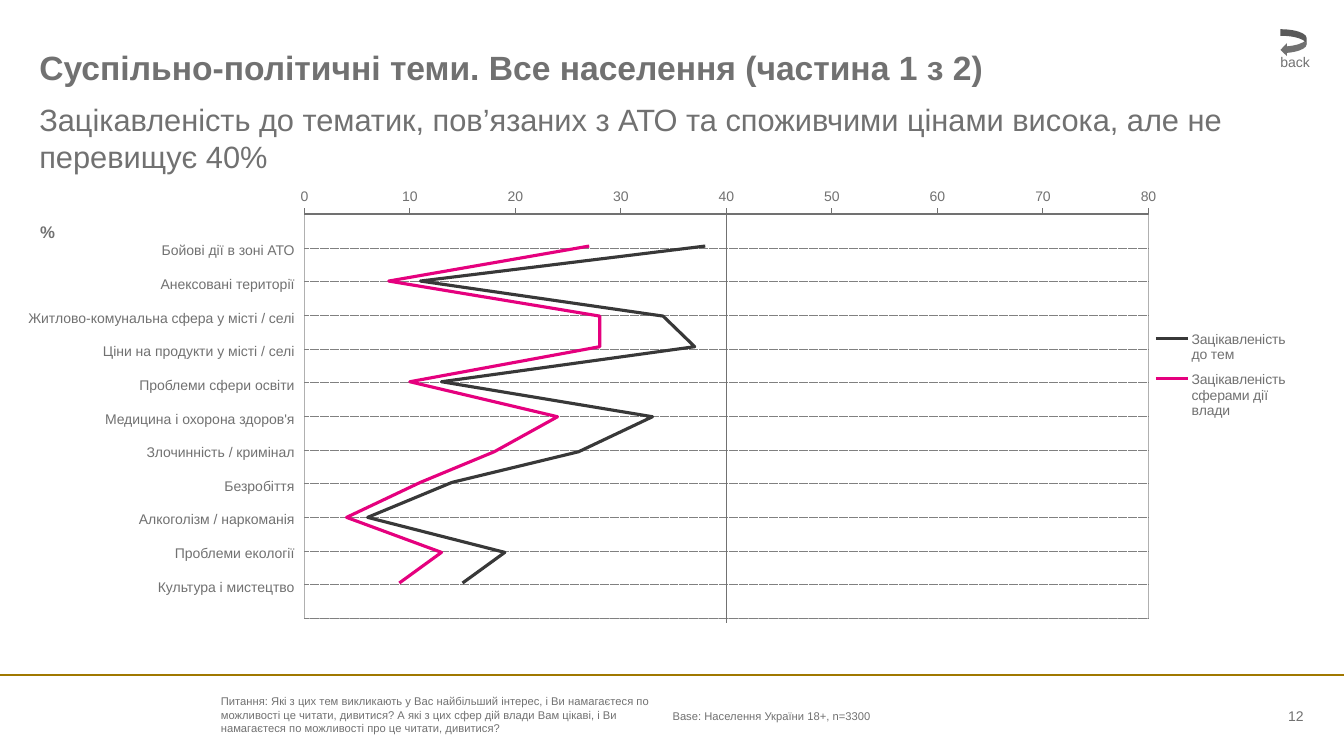
import pptx
import pptx.chart.data
import pptx.dml.color
import pptx.enum.chart
import pptx.enum.dml
import pptx.enum.shapes
import pptx.enum.text
import pptx.oxml
import pptx.oxml.ns
import pptx.util

Inches = pptx.util.Inches
Pt = pptx.util.Pt
RGBColor = pptx.dml.color.RGBColor
Anchor = pptx.enum.text.MSO_ANCHOR
Align = pptx.enum.text.PP_ALIGN
qn = pptx.oxml.ns.qn

GREY = RGBColor(0x71, 0x71, 0x71)
GRID_GREY = RGBColor(0x80, 0x80, 0x80)
FRAME_GREY = RGBColor(0xB0, 0xB0, 0xB0)
DARK = RGBColor(0x38, 0x38, 0x38)
PINK = RGBColor(0xE5, 0x00, 0x7E)
GOLD = RGBColor(0xA0, 0x78, 0x00)
WHITE = RGBColor(0xFF, 0xFF, 0xFF)
NO_TABLE_STYLE = "{2D5ABB26-0587-4C30-8999-92F81FD0307C}"

# Topic, interest in the topic, interest in the authorities' actions
TOPICS = [
    ("Бойові дії в зоні АТО", 38, 27),
    ("Анексовані території", 11, 8),
    ("Житлово-комунальна сфера у місті / селі", 34, 28),
    ("Ціни на продукти у місті / селі", 37, 28),
    ("Проблеми сфери освіти", 13, 10),
    ("Медицина і охорона здоров'я", 33, 24),
    ("Злочинність / кримінал", 26, 18),
    ("Безробіття", 14, 11),
    ("Алкоголізм / наркоманія", 6, 4),
    ("Проблеми екології", 19, 13),
    ("Культура і мистецтво", 15, 9),
]
SERIES = [("Зацікавленість до тем", DARK), ("Зацікавленість сферами дії влади", PINK)]
ROW_STEP = 100 / (len(TOPICS) + 2)


def write(frame, text, size=10, bold=False, align=Align.LEFT, anchor=Anchor.TOP,
          margins=(0, 0, 0, 0)):
    """Fill a text frame; margins run left, top, right, bottom in inches."""
    frame.word_wrap = True
    frame.vertical_anchor = anchor
    (frame.margin_left, frame.margin_top,
     frame.margin_right, frame.margin_bottom) = map(Inches, margins)
    paragraph = frame.paragraphs[0]
    paragraph.alignment = align
    paragraph.space_before = Pt(0)
    run = paragraph.add_run()
    run.text = text
    set_font(run.font, size, bold)


def set_font(font, size, bold=False):
    font.name = "Arial"
    font.size = Pt(size)
    font.bold = bold
    font.color.rgb = GREY


def add_label(slide, box, text, **text_format):
    label = slide.shapes.add_textbox(*map(Inches, box))
    write(label.text_frame, text, **text_format)


def add_rule(slide, start, end, color, width):
    rule = slide.shapes.add_connector(
        pptx.enum.shapes.MSO_CONNECTOR.STRAIGHT, *map(Inches, start + end))
    rule.line.color.rgb = color
    rule.line.width = Pt(width)
    rule._element.spPr.append(pptx.oxml.parse_xml(
        f"<a:effectLst {pptx.oxml.ns.nsdecls('a')}/>"))


def add_title(slide, text):
    title = slide.shapes.title
    title.left, title.top, title.width, title.height = map(Inches, (0.39, 0.45, 12.54, 0.44))
    write(title.text_frame, text, size=24, bold=True, anchor=Anchor.MIDDLE)


def manual_layout(x, y, width, height, inner=False):
    target = '<c:layoutTarget val="inner"/>' if inner else ""
    return pptx.oxml.parse_xml(
        f"<c:layout {pptx.oxml.ns.nsdecls('c')}><c:manualLayout>{target}"
        '<c:xMode val="edge"/><c:yMode val="edge"/>'
        f'<c:x val="{x}"/><c:y val="{y}"/><c:w val="{width}"/><c:h val="{height}"/>'
        "</c:manualLayout></c:layout>")


def profile_points():
    """Stack both profiles in one x column; each series fills its own part of y."""
    _, interest, authorities = zip(*TOPICS)
    percents = [*interest, None, None, *authorities, None]
    levels = [round(step * ROW_STEP) for step in range(1, len(TOPICS) + 3)]
    first, second = levels[1:], levels
    return percents, (first + [None] * len(second), [None] * len(first) + second)


def add_profile_chart(slide):
    """Draw each series as a vertical profile, one level per topic."""
    percents, level_columns = profile_points()
    profile_data = pptx.chart.data.XyChartData()
    for (name, _), levels in zip(SERIES, level_columns):
        profile = profile_data.add_series(name)
        for percent, level in zip(percents, levels):
            profile.add_data_point(percent, level)
    chart = slide.shapes.add_chart(
        pptx.enum.chart.XL_CHART_TYPE.XY_SCATTER_LINES_NO_MARKERS,
        *map(Inches, (2.54, 1.87, 10.4, 4.38)), profile_data).chart
    drop_empty_points(chart)
    chart.has_title = False
    set_font(chart.font, 10)
    for profile, (_, color) in zip(chart.plots[0].series, SERIES):
        profile.smooth = False
        profile.format.line.color.rgb = color
        profile.format.line.width = Pt(2.25)
        profile.marker.style = pptx.enum.chart.XL_MARKER_STYLE.NONE
    format_axes(chart)
    format_plot_area(chart)

    chart.has_legend = True
    chart.legend.position = pptx.enum.chart.XL_LEGEND_POSITION.RIGHT
    chart.legend.include_in_layout = False
    set_font(chart.legend.font, 10)
    legend = chart.legend._element
    for layout in legend.findall(qn("c:layout")):
        legend.remove(layout)
    legend.find(qn("c:legendPos")).addnext(manual_layout(0.85, 0.3, 0.14, 0.24))


def drop_empty_points(chart):
    for point in list(chart._chartSpace.iter(qn("c:pt"))):
        if point.find(qn("c:v")).text in (None, "", "None"):
            point.getparent().remove(point)


def format_axes(chart):
    percent = chart.category_axis
    percent.minimum_scale, percent.maximum_scale, percent.major_unit = 0, 80, 10
    percent.has_major_gridlines = False
    percent.major_tick_mark = pptx.enum.chart.XL_TICK_MARK.OUTSIDE
    percent.tick_labels.number_format = "0"
    percent.tick_labels.number_format_is_linked = False
    set_font(percent.tick_labels.font, 10)
    percent.format.line.color.rgb = GREY
    percent.format.line.width = Pt(0.82)

    levels = chart.value_axis
    levels.minimum_scale, levels.maximum_scale, levels.major_unit = ROW_STEP, 100, ROW_STEP
    levels.reverse_order = True
    levels.crosses = pptx.enum.chart.XL_AXIS_CROSSES.MINIMUM
    levels.has_major_gridlines = True
    grid = levels.major_gridlines.format.line
    grid.color.rgb = GRID_GREY
    grid.width = Pt(0.2)
    grid.dash_style = pptx.enum.dml.MSO_LINE.SQUARE_DOT
    levels.visible = False


def format_plot_area(chart):
    plot_area = chart._chartSpace.chart.plotArea
    for layout in plot_area.findall(qn("c:layout")):
        plot_area.remove(layout)
    plot_area.insert(0, manual_layout(0.046, 0.053, 0.805, 0.92, inner=True))
    plot_area.append(pptx.oxml.parse_xml(
        f"<c:spPr {pptx.oxml.ns.nsdecls('c', 'a')}>"
        f'<a:solidFill><a:srgbClr val="{WHITE}"/></a:solidFill>'
        f'<a:ln w="6350"><a:solidFill><a:srgbClr val="{FRAME_GREY}"/></a:solidFill></a:ln>'
        "</c:spPr>"))


def add_topic_table(slide):
    table = slide.shapes.add_table(
        len(TOPICS), 1, *map(Inches, (0.16, 2.32, 2.77, 3.67))).table
    table._tbl.tblPr.find(qn("a:tableStyleId")).text = NO_TABLE_STYLE
    table.first_row = False
    table.horz_banding = False
    for row, (topic, *_) in enumerate(TOPICS):
        cell = table.cell(row, 0)
        cell.fill.background()
        write(cell.text_frame, topic, align=Align.RIGHT)
        cell.vertical_anchor = Anchor.MIDDLE
        cell.margin_left = cell.margin_top = cell.margin_right = Inches(0.01)
        cell.margin_bottom = 0


def add_back_button(slide):
    arrow = slide.shapes.add_shape(
        pptx.enum.shapes.MSO_SHAPE.CURVED_LEFT_ARROW,
        *map(Inches, (12.7, 0.29, 0.26, 0.27)))
    arrow.shadow.inherit = False
    arrow.fill.solid()
    arrow.fill.fore_color.rgb = GREY
    arrow.line.fill.background()
    add_label(slide, (12.7, 0.53, 0.35, 0.17), "back")


def main():
    presentation = pptx.Presentation()
    presentation.slide_width = Inches(13.33)
    presentation.slide_height = Inches(7.5)
    slide = presentation.slides.add_slide(presentation.slide_layouts[5])

    add_rule(slide, (0, 6.7), (13.33, 6.7), GOLD, 1.5)
    add_title(slide, "Суспільно-політичні теми. Все населення (частина 1 з 2)")
    add_label(slide, (0.39, 1, 12.55, 0.43),
              "Зацікавленість до тематик, пов’язаних з АТО та споживчими цінами "
              "висока, але не перевищує 40%", size=22)
    add_profile_chart(slide)
    add_label(slide, (0.3, 2.15, 4.82, 0.3), "%", size=12, bold=True,
              margins=(0.1, 0.05, 0.1, 0.05))
    add_topic_table(slide)
    add_rule(slide, (7.2, 2.13), (7.2, 6.18), GREY, 0.5)
    add_label(slide, (2.15, 6.89, 4.42, 0.4),
              "Питання: Які з цих тем викликають у Вас найбільший інтерес, і Ви "
              "намагаєтеся по можливості це читати, дивитися? А які з цих сфер дій "
              "влади Вам цікаві, і Ви намагаєтеся по можливості про це читати, дивитися?",
              size=8, anchor=Anchor.BOTTOM, margins=(0.04, 0, 0.04, 0))
    add_label(slide, (6.67, 6.99, 5.11, 0.22), "Base: Населення України 18+, n=3300",
              size=8, anchor=Anchor.MIDDLE)
    add_label(slide, (11.87, 6.99, 1.06, 0.22), "12", align=Align.RIGHT, anchor=Anchor.MIDDLE)
    add_back_button(slide)
    presentation.save("out.pptx")


if __name__ == "__main__":
    main()
